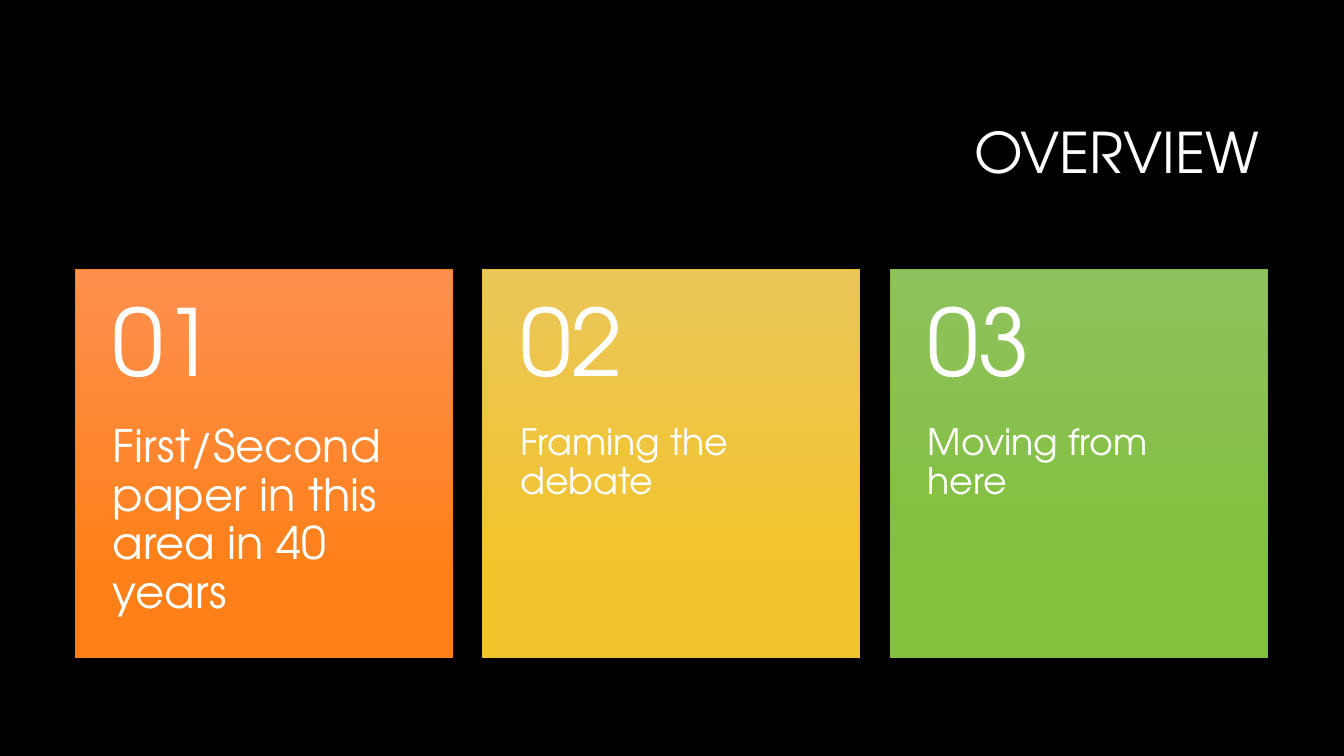
"""Build the overview slide with three numbered gradient tiles."""
from pptx import Presentation
from pptx.dml.color import RGBColor as RGB
from pptx.enum.shapes import MSO_SHAPE as Shape
from pptx.enum.text import MSO_ANCHOR as Anchor, MSO_AUTO_SIZE as Auto, PP_ALIGN as Align
from pptx.util import Cm, Pt

BLACK = RGB(0x00, 0x00, 0x00)
WHITE = RGB(0xFF, 0xFF, 0xFF)
ORANGE = RGB(0xFE, 0x90, 0x4F), RGB(0xFF, 0x80, 0x19), RGB(0xFE, 0x80, 0x1A)
YELLOW = RGB(0xEB, 0xC6, 0x59), RGB(0xF2, 0xC4, 0x2C), RGB(0xE9, 0xBF, 0x35)
GREEN = RGB(0x8F, 0xC1, 0x5E), RGB(0x81, 0xC1, 0x3C), RGB(0x81, 0xBB, 0x42)

LEFT, TOP, STEP = 1.9, 6.78, 10.27
WIDTH, HEAD, BODY = 9.5, 3.91, 5.89
SIDE = Cm(0.94)

TITLE = {"vertical_anchor": Anchor.MIDDLE}
NUMBER = {"vertical_anchor": Anchor.MIDDLE, "margin_left": SIDE, "margin_right": SIDE,
          "margin_top": Cm(0.46), "margin_bottom": Cm(0.46)}
LABEL = {"vertical_anchor": Anchor.TOP, "margin_left": SIDE, "margin_right": SIDE,
         "margin_top": 0, "margin_bottom": Cm(0.91)}

TILES = [
    ("First/Second paper in this area in 40 years", 32, ORANGE),
    ("Framing the debate", 26, YELLOW),
    ("Moving from here", 26, GREEN),
]


def write(box, text, size, style, align=Align.LEFT):
    frame = box.text_frame
    frame.text = text
    for key, value in {"word_wrap": True, "auto_size": Auto.NONE, **style}.items():
        setattr(frame, key, value)
    para = frame.paragraphs[0]
    para.alignment = align
    para.line_spacing = 0.9
    font = para.runs[0].font
    for key, value in {"name": "TeX Gyre Adventor", "size": Pt(size)}.items():
        setattr(font, key, value)
    font.color.rgb = WHITE


deck = Presentation()
deck.slide_width, deck.slide_height = Cm(33.87), Cm(19.05)
slide = deck.slides.add_slide(deck.slide_layouts[5])
slide.background.fill.solid()
slide.background.fill.fore_color.rgb = BLACK

title = slide.shapes.title
place = {"left": Cm(8.05), "top": Cm(2.13), "width": Cm(23.93), "height": Cm(3.58)}
for key, value in place.items():
    setattr(title, key, value)
write(title, "OVERVIEW", 40, TITLE, Align.RIGHT)

for index, (text, size, (light, deep, edge)) in enumerate(TILES):
    left = Cm(LEFT + index * STEP)
    group = slide.shapes.add_group_shape().shapes
    tile = group.add_shape(Shape.RECTANGLE, left, Cm(TOP), Cm(WIDTH), Cm(HEAD + BODY))
    tile.shadow.inherit = False
    tile.fill.gradient()
    tile.fill.gradient_angle = 270
    for stop, color, spot in zip(tile.fill.gradient_stops, (light, deep), (0, 0.78)):
        stop.color.rgb = color
        stop.position = spot
    tile.line.color.rgb = edge
    tile.line.width = Pt(0.75)
    label = group.add_textbox(left, Cm(TOP + HEAD), Cm(WIDTH), Cm(BODY))
    write(label, text, size, LABEL)
    number = group.add_textbox(left, Cm(TOP), Cm(WIDTH), Cm(HEAD))
    write(number, f"{index + 1:02}", 66, NUMBER)

deck.save("out.pptx")
